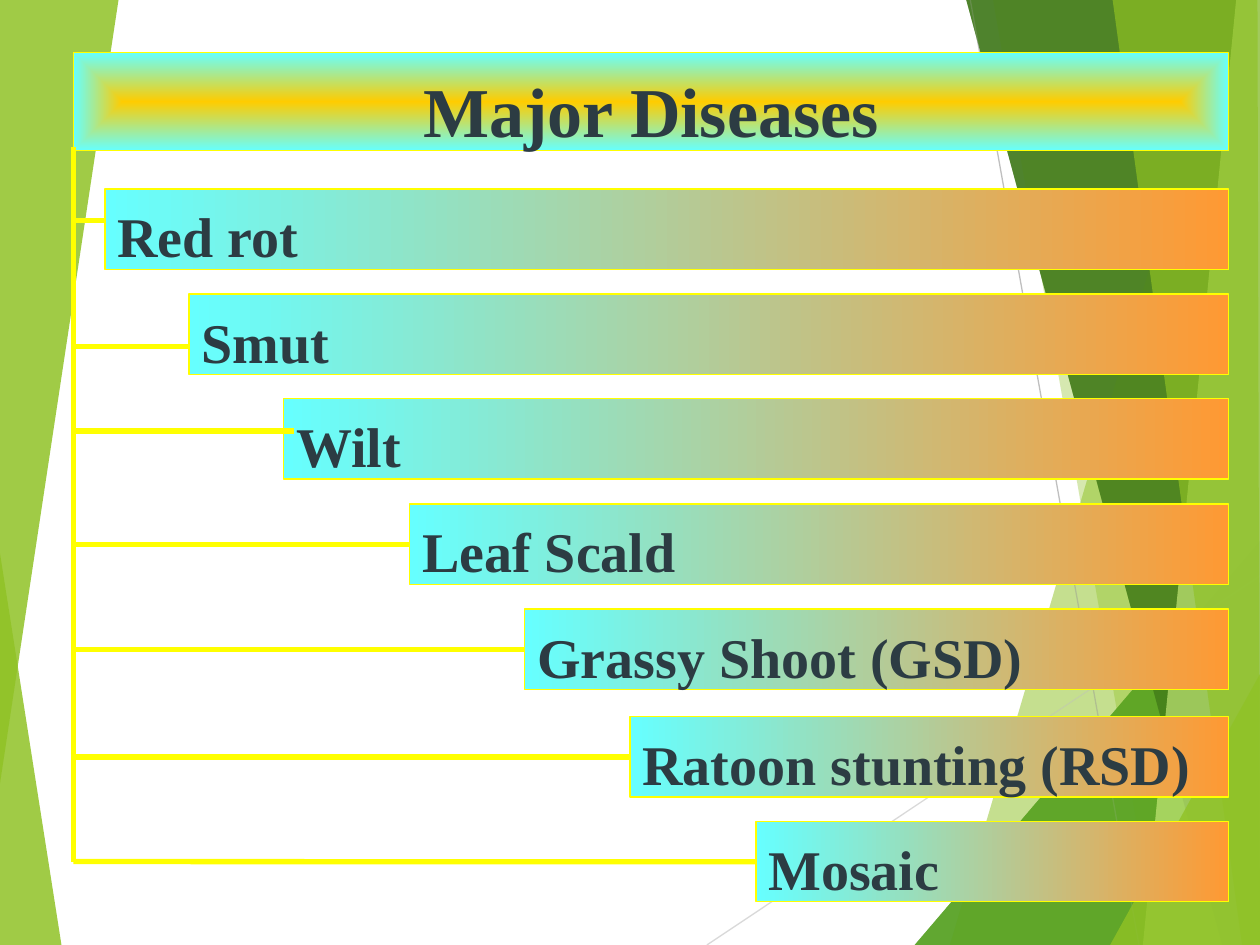
"""Build a slide that lists the major diseases as a stepped tree."""
from lxml import etree
from pptx import Presentation
from pptx import util as u
from pptx.dml.color import RGBColor
from pptx.enum import shapes as s, text as t
from pptx.oxml.ns import qn

LIME = RGBColor(0x90, 0xC2, 0x26)
LEAF = RGBColor(0x54, 0xA0, 0x21)
MOSS = RGBColor(0x3F, 0x78, 0x19)
PALE = RGBColor(0xC0, 0xE4, 0x74)
GREY = RGBColor(0xBF, 0xBF, 0xBF)
MIST = RGBColor(0xD9, 0xD9, 0xD9)
AQUA = RGBColor(0x66, 0xFF, 0xFF)
ORANGE = RGBColor(0xFF, 0x99, 0x33)
GOLD = RGBColor(0xFF, 0xCC, 0x00)
YELLOW = RGBColor(0xFF, 0xFF, 0x00)
SLATE = RGBColor(0x2C, 0x3C, 0x43)
WIDE, HIGH = 25.4, 19.05

deck = Presentation()
deck.slide_width, deck.slide_height = u.Cm(WIDE), u.Cm(HIGH)
slide = deck.slides.add_slide(deck.slide_layouts[5])
tree = slide.shapes


def style(box, words, size, align, inset, first, last):
    """Give a box its gradient, outline and text."""
    box.fill.gradient()
    for stop, color in zip(box.fill.gradient_stops, (first, last)):
        stop.color.rgb = color
    box.line.color.rgb = YELLOW
    box.line.width = u.Pt(0.75)
    frame = box.text_frame
    frame.word_wrap = True
    frame.auto_size = t.MSO_AUTO_SIZE.NONE
    frame.vertical_anchor = t.MSO_ANCHOR.TOP
    frame.margin_top, frame.margin_bottom = u.Cm(inset), 0
    para = frame.paragraphs[0]
    para.alignment = align
    para.space_before = u.Pt(0)
    run = para.add_run()
    run.text = words
    run.font.name = "Times New Roman"
    run.font.size = u.Pt(size)
    run.font.bold = True
    run.font.color.rgb = SLATE


def draw(ends, color, width):
    """Draw a straight line between two points."""
    line = tree.add_connector(s.MSO_CONNECTOR.STRAIGHT, *map(u.Cm, ends))
    line.line.color.rgb = color
    line.line.width = u.Pt(width)
    etree.SubElement(line._element.spPr, qn("a:effectLst"))
    return line


edge = [(WIDE, HIGH), (WIDE, 0)]
right = [
    (LIME, 30, [(24.77, 0), (19.15, HIGH)] + edge),
    (LIME, 20, [(20.02, 0), (23.34, HIGH)] + edge),
    (LEAF, 72, [(18.44, HIGH), (WIDE, 10.9), (WIDE, HIGH)]),
    (MOSS, 70, [(19.48, 0), (24.64, HIGH)] + edge),
    (PALE, 70, [(24.92, 0), (23.04, HIGH)] + edge),
    (LIME, 65, [(22.43, 0), (25.04, HIGH), (WIDE, HIGH), (25.35, 0)]),
    (LIME, 80, [(22.38, HIGH), (WIDE, 13.59), (WIDE, HIGH)]),
]
low = (LIME, 85, [(0, 11.15), (1.24, HIGH), (0, HIGH)])
top = (LIME, 85, [(0, 0), (2.39, 0), (0, 15.8)])
rays = [((14.25, HIGH, WIDE, 11.61), MIST), ((19.56, 0, 22.96, HIGH), GREY)]

for lines, facets in (([], [low] + right), (rays, right + [top])):
    for ends, color in lines:
        draw(ends, color, 0.75)
    for color, alpha, points in facets:
        spots = [(u.Cm(x), u.Cm(y)) for x, y in points]
        pen = tree.build_freeform(*spots[0])
        pen.add_line_segments(spots[1:])
        facet = pen.convert_to_shape()
        facet.shadow.inherit = False
        facet.fill.solid()
        facet.fill.fore_color.rgb = color
        facet.line.fill.background()
        tint = facet._element.spPr.find(qn("a:solidFill"))[0]
        etree.SubElement(tint, qn("a:alpha"), val=str(alpha * 1000))

TRUNK, END, TALL = 1.48, 24.77, 1.62
HALF = TALL / 2
title = tree.title
title.left, title.top = u.Cm(TRUNK), u.Cm(1.06)
title.width, title.height = u.Cm(END - TRUNK), u.Cm(1.98)
style(title, "Major Diseases", 40, t.PP_ALIGN.CENTER, 0.3, GOLD, AQUA)
grad = title._element.spPr.find(qn("a:gradFill"))
grad.remove(grad.find(qn("a:lin")))
glow = etree.SubElement(grad, qn("a:path"), {"path": "shape"})
etree.SubElement(glow, qn("a:fillToRect"), dict.fromkeys("ltrb", "50000"))
tree._spTree.append(title._element)

draw((TRUNK, 2.96, TRUNK, 17.37), YELLOW, 3)
rows = [
    ("Red rot", 2.12, 3.81, 0.64, 0),
    ("Smut", 3.81, 5.93, 1.06, 0),
    ("Wilt", 5.72, 8.04, 0.65, 0.21),
    ("Leaf Scald", 8.26, 10.16, HALF, 0),
    ("Grassy Shoot (GSD)", 10.58, 12.28, HALF, 0),
    ("Ratoon stunting (RSD)", 12.7, 14.45, HALF, 0),
    ("Mosaic", 15.24, 16.56, HALF, 0),
]
for name, left, y, drop, past in rows:
    place = map(u.Cm, (left, y, END - left, TALL))
    box = tree.add_shape(s.MSO_SHAPE.RECTANGLE, *place)
    box.shadow.inherit = False
    style(box, name, 32, t.PP_ALIGN.LEFT, 0.26, AQUA, ORANGE)
    box.fill.gradient_angle = 0
    branch = draw((TRUNK, y + drop, left + past, y + drop), YELLOW, 3)
    if drop == HALF:
        branch.end_connect(box, 1)

deck.save("out.pptx")
